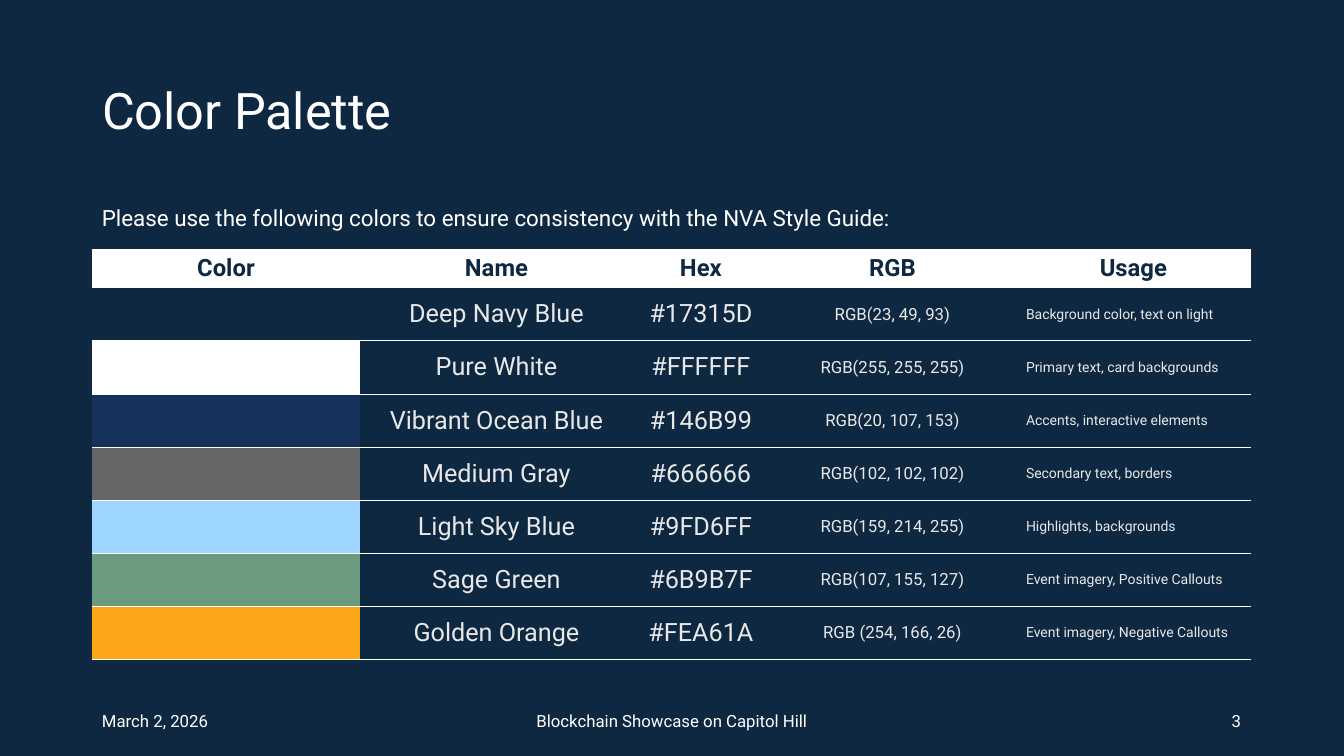
"""Build the colour palette slide of a style guide."""
from lxml.etree import SubElement
from pptx import Presentation
from pptx.dml.color import RGBColor
from pptx.enum.text import MSO_ANCHOR as ANCHOR, PP_ALIGN as ALIGN
from pptx.oxml.ns import qn
from pptx.util import Emu, Pt

COLORS = {"navy": "0E2841", "white": "FFFFFF", "pale": "E8E8E8"}
WIDTH, HEIGHT = 1344, 756
LEFT, CONTENT_W = 92, 1159
FOOTER_Y, FOOTER_H = 701, 40
HEADER_H, BODY_H = 38, 372
COLUMN_WIDTHS = [268, 273, 136, 247, 235]
HEADERS = ["Color", "Name", "Hex", "RGB", "Usage"]
SIZES = [18, 18, 18, 12, 10]
PALETTE = [
    ("0E2841", "Deep Navy Blue", "#17315D", "RGB(23, 49, 93)", "Background color, text on light"),
    ("FFFFFF", "Pure White", "#FFFFFF", "RGB(255, 255, 255)", "Primary text, card backgrounds"),
    ("17315D", "Vibrant Ocean Blue", "#146B99", "RGB(20, 107, 153)", "Accents, interactive elements"),
    ("666666", "Medium Gray", "#666666", "RGB(102, 102, 102)", "Secondary text, borders"),
    ("9FD6FF", "Light Sky Blue", "#9FD6FF", "RGB(159, 214, 255)", "Highlights, backgrounds"),
    ("6B9B7F", "Sage Green", "#6B9B7F", "RGB(107, 155, 127)", "Event imagery, Positive Callouts"),
    ("FEA61A", "Golden Orange", "#FEA61A", "RGB (254, 166, 26)", "Event imagery, Negative Callouts"),
]


def px(n):
    return Emu(round(n * 914400 / 100.8))


def rgb(value):
    return RGBColor.from_string(value)


class Deck:
    font = "Roboto"

    def __init__(self):
        self.prs = Presentation()
        self.prs.slide_width, self.prs.slide_height = px(WIDTH), px(HEIGHT)
        self.s = self.prs.slides.add_slide(self.prs.slide_layouts[5])
        fill = self.s.background.fill
        fill.solid()
        fill.fore_color.rgb = rgb(COLORS["navy"])

    def set_text(self, tf, text, size, color="white", align=ALIGN.LEFT, bold=False, spacing=None):
        tf.text = text
        p = tf.paragraphs[0]
        p.alignment, p.line_spacing = align, spacing
        for r in p.runs:
            r.font.name, r.font.size, r.font.bold = self.font, Pt(size), bold
            r.font.color.rgb = rgb(COLORS[color])

    def title(self, text, x, y, w, h):
        sp = self.s.shapes.title
        sp.left, sp.top, sp.width, sp.height = map(px, (x, y, w, h))
        sp.text_frame.vertical_anchor = ANCHOR.MIDDLE
        self.set_text(sp.text_frame, text, 36, spacing=0.9)

    def text(self, text, x, y, w, h, size, align=ALIGN.LEFT, anchor=ANCHOR.MIDDLE, spacing=None):
        tf = self.s.shapes.add_textbox(*map(px, (x, y, w, h))).text_frame
        tf.word_wrap, tf.vertical_anchor = True, anchor
        self.set_text(tf, text, size, align=align, spacing=spacing)

    def borders(self, cell, visible):
        tcPr = cell._tc.get_or_add_tcPr()
        for side in "LRTB":
            ln = SubElement(tcPr, qn(f"a:ln{side}"), w=str(Pt(0.5)))
            if side in visible:
                fill = SubElement(ln, qn("a:solidFill"))
                SubElement(fill, qn("a:srgbClr"), val=COLORS["white"])
            else:
                SubElement(ln, qn("a:noFill"))

    def cell(self, cell, text, fill, size, visible, **style):
        self.borders(cell, visible)
        cell.fill.solid()
        cell.fill.fore_color.rgb = rgb(fill)
        cell.vertical_anchor = ANCHOR.MIDDLE
        self.set_text(cell.text_frame, text, size, **style)

    def palette_table(self, x, y):
        frame = self.s.shapes.add_table(len(PALETTE) + 1, len(HEADERS),
                                        *map(px, (x, y, CONTENT_W, HEADER_H + BODY_H)))
        table = frame.table
        table.horz_banding = False
        for column, width in zip(table.columns, COLUMN_WIDTHS):
            column.width = px(width)
        for i, row in enumerate(table.rows):
            row.height = px(BODY_H / len(PALETTE) if i else HEADER_H)
        for j, header in enumerate(HEADERS):
            self.cell(table.cell(0, j), header, COLORS["white"], 17, "",
                      color="navy", align=ALIGN.CENTER, bold=True)
        for i, (swatch, *values) in enumerate(PALETTE, 1):
            for j, value in enumerate(["", *values]):
                self.cell(table.cell(i, j), value, COLORS["navy"] if j else swatch, SIZES[j],
                          "TB" if i > 1 else "B", color="pale",
                          align=ALIGN.LEFT if j == 4 else ALIGN.CENTER)

    def save(self):
        self.prs.save("out.pptx")


def main():
    deck = Deck()
    deck.title("Color Palette", LEFT, 40, 754, 146)
    deck.text("Please use the following colors to ensure consistency with the NVA Style Guide:",
              LEFT, 202, CONTENT_W, 40, 16, anchor=ANCHOR.TOP, spacing=0.9)
    deck.palette_table(LEFT, 249)
    for text, x, w, align in [
        ("March 2, 2026", LEFT, 302, ALIGN.LEFT),
        ("Blockchain Showcase on Capitol Hill", 445, 454, ALIGN.CENTER),
        ("3", LEFT + CONTENT_W - 302, 302, ALIGN.RIGHT),
    ]:
        deck.text(text, x, FOOTER_Y, w, FOOTER_H, 12, align)
    deck.save()


if __name__ == "__main__":
    main()
